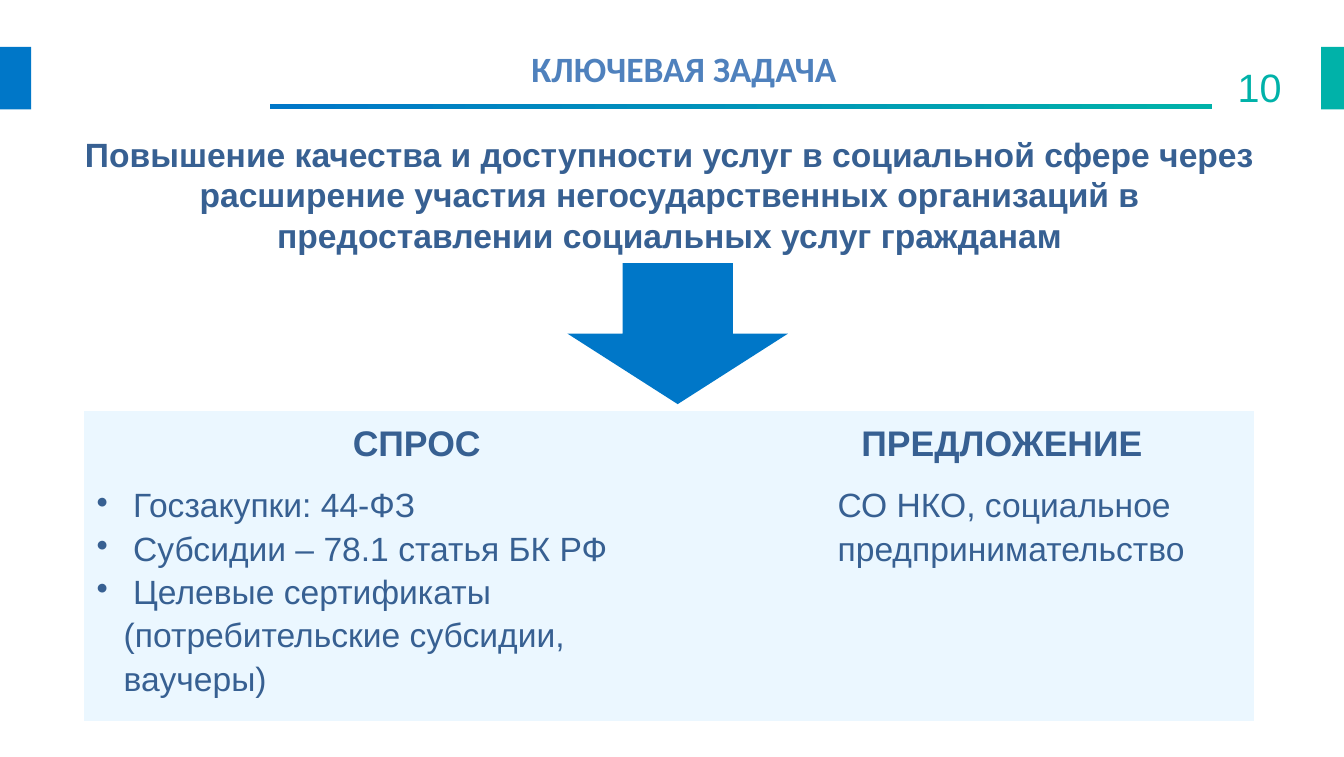
from dataclasses import dataclass

from lxml import etree
from pptx import Presentation
from pptx.dml import color
from pptx.enum import shapes, text
from pptx.oxml import ns
from pptx.util import Inches, Pt


@dataclass(frozen=True)
class Theme:
    blue: str = "0077C8"
    teal: str = "00B2A9"
    title: str = "4F81BD"
    body: str = "376092"
    panel: str = "EBF7FF"
    body_font: str = "Arial"
    title_font: str = "Calibri"
    heading_size: int = 18
    body_size: int = 17
    number_size: int = 20


THEME = Theme()
ALIGN = text.PP_ALIGN
NO_GRID_STYLE = "{2D5ABB26-0587-4C30-8999-92F81FD0307C}"


@dataclass(frozen=True)
class Box:
    left: float
    top: float
    width: float
    height: float

    def lengths(self) -> tuple:
        return tuple(Inches(n) for n in (self.left, self.top, self.width, self.height))


@dataclass(frozen=True)
class Block:
    box: Box
    fills: tuple
    kind: int = shapes.MSO_SHAPE.RECTANGLE


@dataclass(frozen=True)
class TextStyle:
    size: int = THEME.body_size
    color: str = THEME.body
    font: str = THEME.body_font
    bold: bool = False
    align: int = ALIGN.LEFT
    line_spacing: float = 1.0
    margin: float = 0
    indent: float = 0
    bullet: str = ""


@dataclass(frozen=True)
class Label:
    box: Box
    lines: tuple
    style: TextStyle
    inset_x: float = 0.08
    inset_y: float = 0.04


@dataclass(frozen=True)
class Column:
    width: float
    heading: str
    lines: tuple
    style: TextStyle


BLOCKS = (
    Block(Box(0, 0.33, 0.22, 0.44), (THEME.blue,)),
    Block(Box(9.29, 0.33, 0.16, 0.44), (THEME.teal,)),
    Block(Box(1.9, 0.73, 6.62, 0.04), (THEME.blue, THEME.teal)),
    Block(Box(3.99, 1.85, 1.55, 0.99), (THEME.blue,), shapes.MSO_SHAPE.DOWN_ARROW),
)
LABELS = (
    Label(
        Box(0.41, 0.25, 8.8, 0.59),
        ("КЛЮЧЕВАЯ ЗАДАЧА",),
        TextStyle(THEME.heading_size, THEME.title, THEME.title_font, True, ALIGN.CENTER),
        inset_y=0.08,
    ),
    Label(
        Box(0.49, 0.9, 8.44, 0.94),
        (
            "Повышение качества и доступности услуг в социальной сфере через",
            "расширение участия негосударственных организаций в предоставлении социальных услуг гражданам",
        ),
        TextStyle(bold=True, align=ALIGN.CENTER),
    ),
    Label(
        Box(8.53, 0.39, 0.58, 0.28),
        ("10",),
        TextStyle(THEME.number_size, THEME.teal, align=ALIGN.RIGHT),
        inset_x=0.1,
        inset_y=0.05,
    ),
)
TABLE_BOX = Box(0.59, 2.89, 8.23, 2.16)
ROW_HEIGHTS = (0.43, 1.73)
HEADING = TextStyle(
    THEME.heading_size, bold=True, align=ALIGN.CENTER, line_spacing=1.15, indent=0.49
)
COLUMNS = (
    Column(
        4.19,
        "СПРОС",
        (
            " Госзакупки: 44-ФЗ",
            " Субсидии – 78.1 статья БК РФ",
            " Целевые сертификаты (потребительские субсидии, ваучеры)",
        ),
        TextStyle(line_spacing=1.15, margin=0.19, indent=-0.19, bullet="•"),
    ),
    Column(
        4.04,
        "ПРЕДЛОЖЕНИЕ",
        ("СО НКО, социальное", "предпринимательство"),
        TextStyle(line_spacing=1.15, margin=1.02),
    ),
)


def set_attributes(target: object, values: dict) -> None:
    for name, value in values.items():
        setattr(target, name, value)


def write_lines(frame: object, lines: tuple, style: TextStyle) -> None:
    for index, line in enumerate(lines):
        paragraph = frame.add_paragraph() if index else frame.paragraphs[0]
        set_attributes(paragraph, {"alignment": style.align, "line_spacing": style.line_spacing})
        properties = paragraph._p.get_or_add_pPr()
        properties.set("marL", str(Inches(style.margin)))
        properties.set("indent", str(Inches(style.indent)))
        if style.bullet:
            etree.SubElement(properties, ns.qn("a:buChar"), char=style.bullet)
        run = paragraph.add_run()
        run.text = line
        set_attributes(
            run.font, {"name": style.font, "size": Pt(style.size), "bold": style.bold}
        )
        run.font.color.rgb = color.RGBColor.from_string(style.color)


def paint(fill: object, value: str) -> None:
    fill.solid()
    fill.fore_color.rgb = color.RGBColor.from_string(value)


def draw_block(slide: object, block: Block) -> None:
    shape = slide.shapes.add_shape(block.kind, *block.box.lengths())
    shape.shadow.inherit = False
    shape.line.fill.background()
    if len(block.fills) == 1:
        paint(shape.fill, block.fills[0])
        return
    shape.fill.gradient()
    shape.fill.gradient_angle = 0
    for stop, value in zip(shape.fill.gradient_stops, block.fills):
        stop.color.rgb = color.RGBColor.from_string(value)


def draw_label(slide: object, label: Label) -> None:
    frame = slide.shapes.add_textbox(*label.box.lengths()).text_frame
    set_attributes(frame, {
        "word_wrap": True,
        "vertical_anchor": text.MSO_ANCHOR.TOP,
        "margin_left": Inches(label.inset_x),
        "margin_right": Inches(label.inset_x),
        "margin_top": Inches(label.inset_y),
        "margin_bottom": Inches(label.inset_y),
    })
    write_lines(frame, label.lines, label.style)


def draw_table(slide: object) -> None:
    table = slide.shapes.add_table(
        len(ROW_HEIGHTS), len(COLUMNS), *TABLE_BOX.lengths()
    ).table
    set_attributes(table, {"first_row": False, "horz_banding": False})
    table._tbl.tblPr.find(ns.qn("a:tableStyleId")).text = NO_GRID_STYLE
    for row, height in zip(table.rows, ROW_HEIGHTS):
        row.height = Inches(height)
    for index, column in enumerate(COLUMNS):
        table.columns[index].width = Inches(column.width)
        contents = (((column.heading,), HEADING), (column.lines, column.style))
        for row_index, (lines, style) in enumerate(contents):
            cell = table.cell(row_index, index)
            paint(cell.fill, THEME.panel)
            set_attributes(cell, {
                "margin_left": Inches(0.09),
                "margin_right": Inches(0.09),
                "margin_top": Inches(0.05),
                "margin_bottom": Inches(0.05),
            })
            write_lines(cell.text_frame, lines, style)


def main() -> None:
    presentation = Presentation()
    set_attributes(
        presentation, {"slide_width": Inches(9.45), "slide_height": Inches(5.32)}
    )
    slide = presentation.slides.add_slide(presentation.slide_layouts[6])
    for block in BLOCKS:
        draw_block(slide, block)
    for label in LABELS:
        draw_label(slide, label)
    draw_table(slide)
    presentation.save("out.pptx")


if __name__ == "__main__":
    main()
